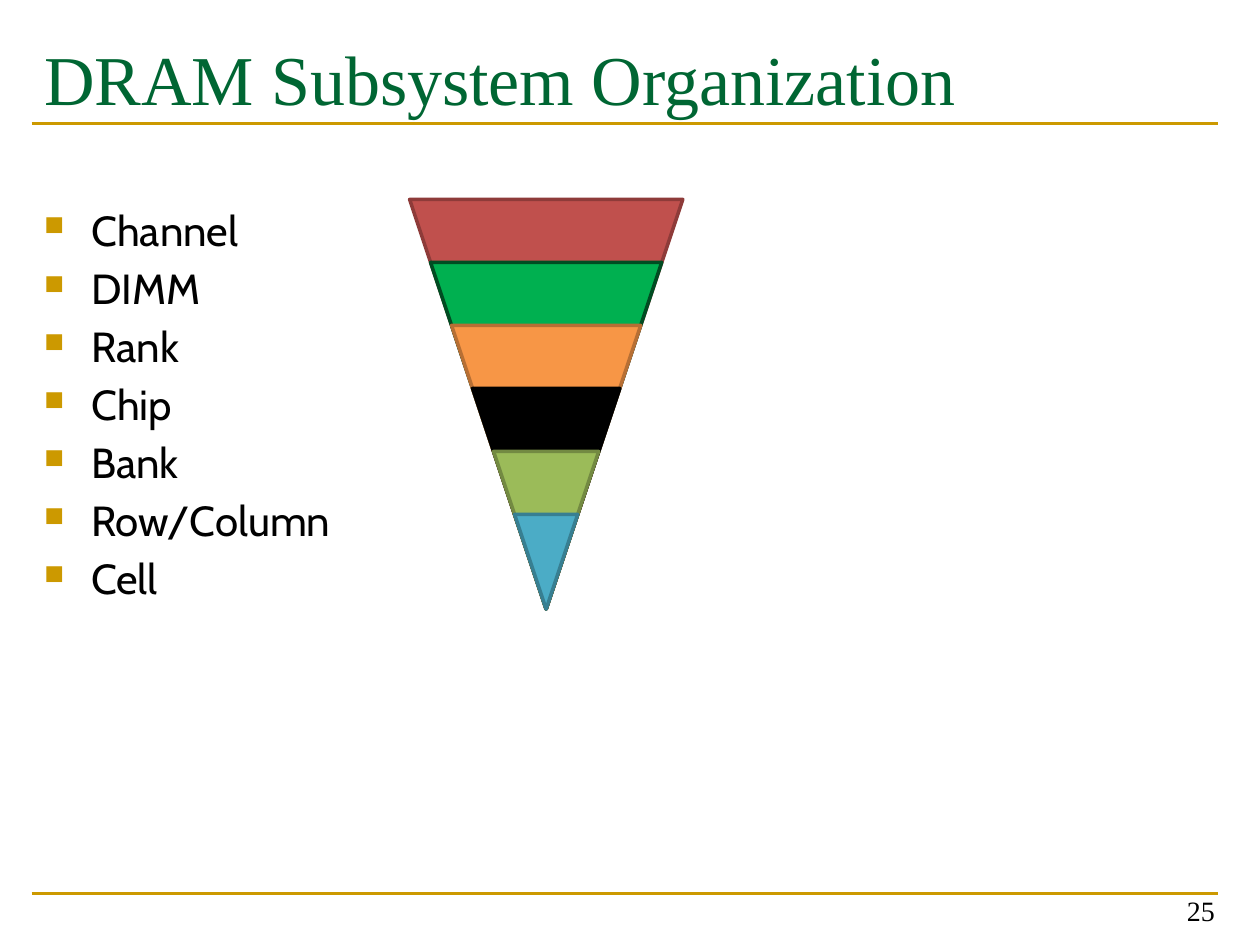
from dataclasses import dataclass

import lxml.etree
import pptx
import pptx.dml.color
import pptx.enum.shapes
import pptx.enum.text
import pptx.oxml.ns
import pptx.util

Cm = pptx.util.Cm
Pt = pptx.util.Pt

COLORS = {
    "title": "006633",
    "gold": "CC9900",
    "text": "000000",
}
LEVELS = ["Channel", "DIMM", "Rank", "Chip", "Bank", "Row/Column", "Cell"]

RULE_LEFT, RULE_RIGHT = 0.64, 24.56
APEX_X, APEX_Y = 11.01, 12.28
FUNNEL_HEIGHT = 8.26
BAND_HEIGHT = 1.27
WIDTH_RATIO = 2 / 3


@dataclass
class TextBlock:
    lines: list[str]
    left: float
    top: float
    width: float
    height: float
    font: str
    size: int
    color: str
    margin_top: float = 0.13
    anchor: pptx.enum.text.MSO_ANCHOR = pptx.enum.text.MSO_ANCHOR.TOP
    align: pptx.enum.text.PP_ALIGN = pptx.enum.text.PP_ALIGN.LEFT
    bulleted: bool = False


@dataclass
class Band:
    fill: str
    line: str


BLOCKS = [
    TextBlock(["DRAM Subsystem Organization"], 0.64, 0.43, 23.92, 2.96,
              "Times New Roman", 40, COLORS["title"], margin_top=0.28),
    TextBlock(LEVELS, 0.64, 2.77, 23.92, 14.42,
              "Cabin", 24, COLORS["text"], margin_top=1.35, bulleted=True),
    TextBlock(["25"], 18.82, 17.55, 5.92, 1.27,
              "Times New Roman", 16, COLORS["text"],
              anchor=pptx.enum.text.MSO_ANCHOR.BOTTOM,
              align=pptx.enum.text.PP_ALIGN.RIGHT),
]
BANDS = [
    Band("C0504D", "8E3B39"),
    Band("00B050", "004C22"),
    Band("F79646", "B76F34"),
    Band("000000", "000000"),
    Band("9BBB59", "738A42"),
    Band("4BACC6", "377F92"),
]


def rgb(value: str) -> pptx.dml.color.RGBColor:
    return pptx.dml.color.RGBColor.from_string(value)


def add_element(parent, tag: str, **attributes: str):
    return lxml.etree.SubElement(parent, pptx.oxml.ns.qn(tag), attributes)


def add_bullet(paragraph) -> None:
    properties = paragraph._p.get_or_add_pPr()
    properties.set("marL", str(Cm(0.95)))
    properties.set("indent", str(-Cm(0.95)))
    color = add_element(properties, "a:buClr")
    add_element(color, "a:srgbClr", val=COLORS["gold"])
    add_element(properties, "a:buSzPct", val="65000")
    add_element(properties, "a:buChar", char="■")


def draw_rule(slide, y: float) -> None:
    connector = slide.shapes.add_connector(
        pptx.enum.shapes.MSO_CONNECTOR.STRAIGHT,
        Cm(RULE_LEFT), Cm(y), Cm(RULE_RIGHT), Cm(y))
    connector.line.color.rgb = rgb(COLORS["gold"])
    connector.line.width = Pt(1.5)
    add_element(connector._element.spPr, "a:effectLst")


def draw_text(slide, block: TextBlock) -> None:
    shape = slide.shapes.add_textbox(
        Cm(block.left), Cm(block.top), Cm(block.width), Cm(block.height))
    text_frame = shape.text_frame
    text_frame.word_wrap = True
    text_frame.vertical_anchor = block.anchor
    text_frame.margin_top = Cm(block.margin_top)
    text_frame.text = "\n".join(block.lines)
    for paragraph in text_frame.paragraphs:
        paragraph.alignment = block.align
        if block.bulleted:
            paragraph.space_after = Pt(4.4)
            add_bullet(paragraph)
        for run in paragraph.runs:
            run.font.name = block.font
            run.font.size = Pt(block.size)
            run.font.color.rgb = rgb(block.color)


def draw_band(slide, index: int, band: Band) -> None:
    height = FUNNEL_HEIGHT - index * BAND_HEIGHT
    width = height * WIDTH_RATIO
    shape = slide.shapes.add_shape(
        pptx.enum.shapes.MSO_SHAPE.FLOWCHART_MERGE,
        Cm(APEX_X - width / 2), Cm(APEX_Y - height), Cm(width), Cm(height))
    shape.shadow.inherit = False
    shape.fill.solid()
    shape.fill.fore_color.rgb = rgb(band.fill)
    shape.line.color.rgb = rgb(band.line)
    shape.line.width = Pt(2)


def main() -> None:
    presentation = pptx.Presentation()
    presentation.slide_width = Cm(25.4)
    presentation.slide_height = Cm(19.05)
    slide = presentation.slides.add_slide(presentation.slide_layouts[6])
    for y in (18.01, 2.49):
        draw_rule(slide, y)
    for block in BLOCKS:
        draw_text(slide, block)
    for index, band in enumerate(BANDS):
        draw_band(slide, index, band)
    presentation.save("out.pptx")


if __name__ == "__main__":
    main()
